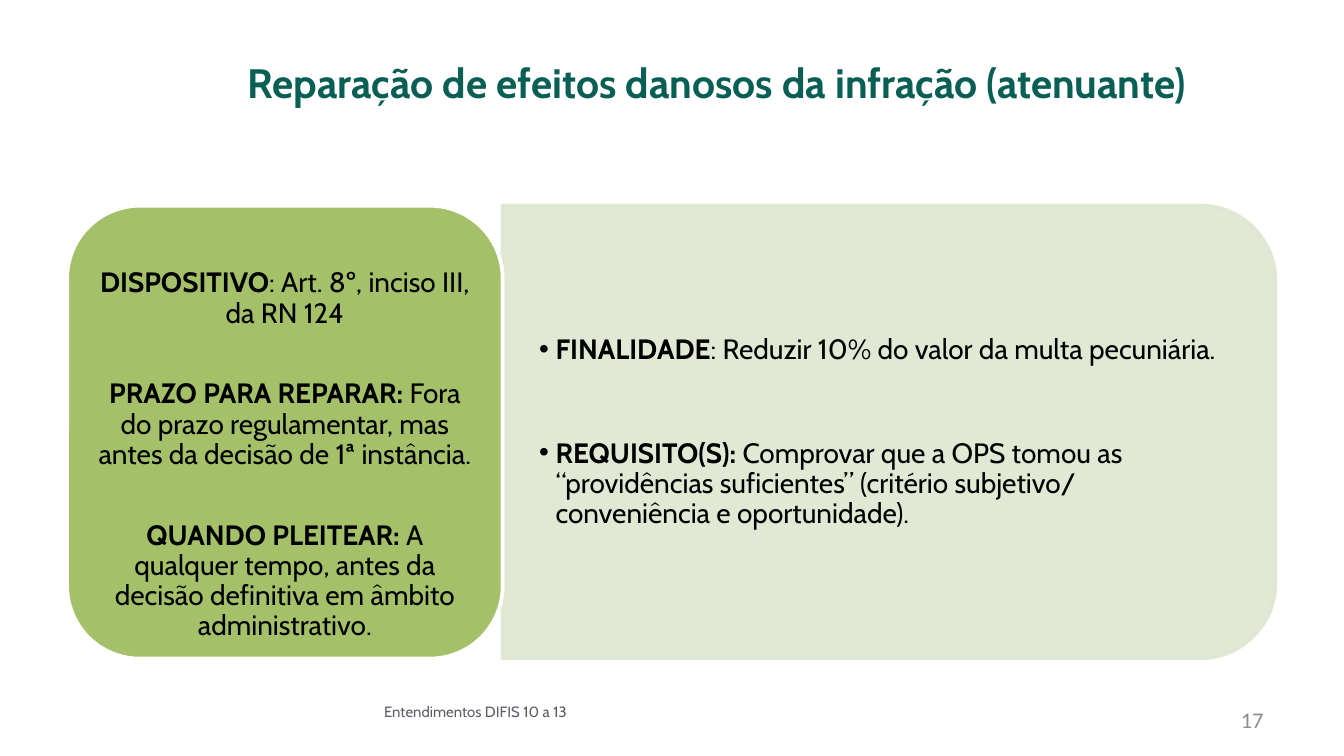
from lxml import etree
from pptx import Presentation
from pptx.dml import color
from pptx.enum import shapes, text
from pptx.oxml import ns
from pptx.util import Cm, Pt

CENTER, LEFT, RIGHT = text.PP_ALIGN.CENTER, text.PP_ALIGN.LEFT, text.PP_ALIGN.RIGHT
MIDDLE, TOP = text.MSO_ANCHOR.MIDDLE, text.MSO_ANCHOR.TOP

PROVISIONS = [
    ("DISPOSITIVO", ": Art. 8º, inciso III, da RN 124"),
    ("PRAZO PARA REPARAR: ",
     "Fora do prazo regulamentar, mas antes da decisão de 1ª instância."),
    ("QUANDO PLEITEAR: ",
     "A qualquer tempo, antes da decisão definitiva em âmbito administrativo."),
]
CONDITIONS = [
    ("FINALIDADE", ": Reduzir 10% do valor da multa pecuniária."),
    ("REQUISITO(S): ",
     "Comprovar que a OPS tomou as “providências suficientes” "
     "(critério subjetivo/ conveniência e oportunidade)."),
]


def rgb(hex_value):
    """Turn a hex string into a colour."""
    return color.RGBColor.from_string(hex_value)


def paint(fill, hex_value, opacity=100):
    """Give a fill a solid colour with an opacity in percent."""
    fill.solid()
    fill.fore_color.rgb = rgb(hex_value)
    if opacity < 100:
        tone = fill._xPr.find(ns.qn("a:solidFill"))[0]
        etree.SubElement(tone, ns.qn("a:alpha"), val=str(opacity * 1000))


def add_bullet(paragraph, indent):
    """Hang a bullet in front of a paragraph."""
    properties = paragraph._p.get_or_add_pPr()
    properties.set("marL", str(indent))
    properties.set("indent", str(-indent))
    etree.SubElement(properties, ns.qn("a:buFont"), typeface="Arial")
    etree.SubElement(properties, ns.qn("a:buChar"), char="•")


def write(frame, entries, size, ink="000000", font="Cabin", align=CENTER,
          anchor=MIDDLE, insets=(0.25, 0.13, 0.25, 0.13), spacing=1.0,
          gap=0, bullet=None):
    """Fill a frame with paragraphs, each a pair of bold and regular text."""
    frame.word_wrap = True
    frame.vertical_anchor = anchor
    (frame.margin_left, frame.margin_top,
     frame.margin_right, frame.margin_bottom) = map(Cm, insets)
    for index, entry in enumerate(entries):
        paragraph = frame.add_paragraph() if index else frame.paragraphs[0]
        paragraph.alignment = align
        paragraph.line_spacing = spacing
        if index:
            paragraph.space_before = Pt(gap)
        if bullet:
            add_bullet(paragraph, bullet)
        for wording, bold in zip(entry, (True, False)):
            if wording:
                run = paragraph.add_run()
                run.text = wording
                run.font.name, run.font.size, run.font.bold = font, Pt(size), bold
                run.font.color.rgb = rgb(ink)


def add_label(slide, place, entries, size, **form):
    """Add a text box."""
    box = slide.shapes.add_textbox(*map(Cm, place))
    write(box.text_frame, entries, size, **form)


def add_panel(slide, preset, place, fill, line, line_opacity=100):
    """Add a translucent panel with an outline."""
    panel = slide.shapes.add_shape(preset, *map(Cm, place))
    panel.shadow.inherit = False
    paint(panel.fill, fill, 90)
    paint(panel.line.fill, line, line_opacity)
    panel.line.width = Pt(2)
    return panel


def main():
    """Build the slide and save it."""
    deck = Presentation()
    deck.slide_width, deck.slide_height = Cm(25.4), Cm(14.29)
    slide = deck.slides.add_slide(deck.slide_layouts[6])

    add_label(slide, (1.27, 0.36, 22.86, 2.39),
              [("Reparação de efeitos danosos da infração (atenuante)", "")],
              22, ink="0A5F55", insets=(1.95, 0.13, 0.25, 0.13))
    add_label(slide, (18.21, 13.23, 5.92, 0.76), [("", "17")], 12,
              ink="8C8C8C", font="Calibri", align=RIGHT)
    add_label(slide, (1.27, 13.23, 15.44, 0.76),
              [("", "Entendimentos DIFIS 10 a 13")], 8, ink="5B5C65",
              insets=(0.25, 0.13, 0.25, 0.46))

    conditions = add_panel(slide, shapes.MSO_SHAPE.ROUND_2_SAME_RECTANGLE,
                           (12.52, 0.86, 8.56, 14.61), "DEE7D1", "DEE7D1", 90)
    conditions.rotation = 90
    add_label(slide, (9.5, 4.32, 14.2, 7.72), CONDITIONS, 15, align=LEFT,
              insets=(0.69, 0.36, 0.69, 0.36), spacing=0.9, gap=39,
              bullet=Cm(0.31))

    provisions = add_panel(slide, shapes.MSO_SHAPE.ROUNDED_RECTANGLE,
                           (1.27, 3.89, 8.23, 8.56), "9BBB59", "FFFFFF")
    write(provisions.text_frame, PROVISIONS, 15, anchor=TOP,
          insets=(0.15, 0.79, 0.15, 0), spacing=0.9, gap=27)

    deck.save("out.pptx")


if __name__ == "__main__":
    main()
